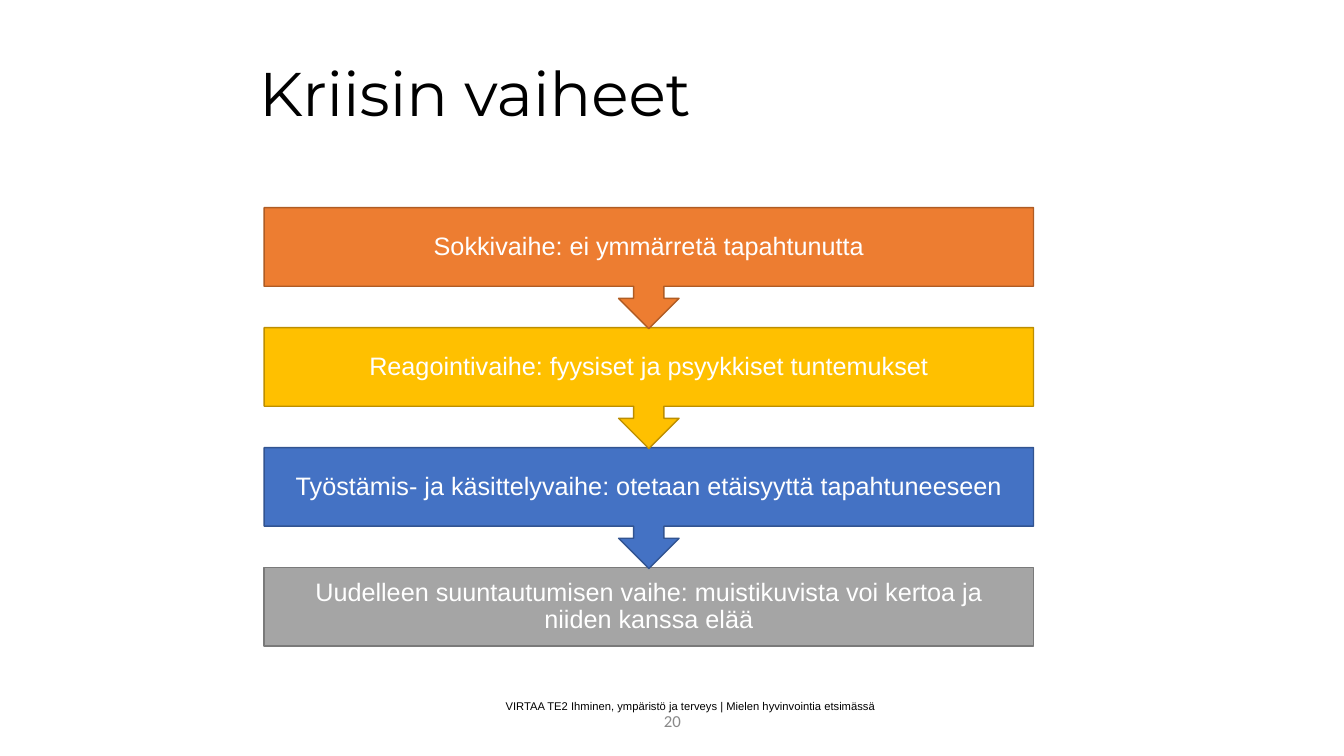
"""Build the slide on the phases of a crisis as a downward chain of boxes."""
from pptx import Presentation
from pptx.dml.color import RGBColor
from pptx.enum.shapes import MSO_SHAPE as Preset
from pptx.enum.text import MSO_ANCHOR as Anchor, PP_ALIGN as Align
from pptx.util import Inches, Pt

BLACK = RGBColor(0x00, 0x00, 0x00)
WHITE = RGBColor(0xFF, 0xFF, 0xFF)
PALE_GRAY = RGBColor(0x89, 0x89, 0x89)
ORANGE = RGBColor(0xED, 0x7D, 0x31)
DARK_ORANGE = RGBColor(0xAF, 0x5C, 0x24)
YELLOW = RGBColor(0xFF, 0xC0, 0x00)
DARK_YELLOW = RGBColor(0xBD, 0x8E, 0x00)
BLUE = RGBColor(0x44, 0x72, 0xC4)
DARK_BLUE = RGBColor(0x32, 0x54, 0x91)
GRAY = RGBColor(0xA5, 0xA5, 0xA5)
DARK_GRAY = RGBColor(0x7A, 0x7A, 0x7A)

PHASES = [
    ("Sokkivaihe: ei ymmärretä tapahtunutta", ORANGE, DARK_ORANGE),
    ("Reagointivaihe: fyysiset ja psyykkiset tuntemukset", YELLOW, DARK_YELLOW),
    ("Työstämis- ja käsittelyvaihe: otetaan etäisyyttä tapahtuneeseen",
     BLUE, DARK_BLUE),
    ("Uudelleen suuntautumisen vaihe: muistikuvista voi kertoa ja niiden kanssa elää",
     GRAY, DARK_GRAY),
]
LEFT, TOP, WIDTH = 2.62, 2.06, 7.63
BOX_HEIGHT, CALLOUT_HEIGHT, PITCH = 0.78, 1.2, 1.19


class SlideBuilder:
    """Hold the text style and the current slide."""

    def __init__(self, slide, font="Arial"):
        self.slide = slide
        self.font = font

    def set_text(self, frame, text, size, color, align, font=None, spacing=None):
        frame.word_wrap = True
        frame.vertical_anchor = Anchor.MIDDLE
        paragraph = frame.paragraphs[0]
        paragraph.alignment = align
        if spacing:
            paragraph.line_spacing = spacing
        run = paragraph.add_run()
        run.text = text
        run.font.name = font or self.font
        run.font.size = Pt(size)
        run.font.color.rgb = color

    def title(self, text, left, top, width, height):
        heading = self.slide.shapes.title
        heading.left, heading.top = Inches(left), Inches(top)
        heading.width, heading.height = Inches(width), Inches(height)
        self.set_text(heading.text_frame, text, 44, BLACK, Align.LEFT,
                      "Montserrat", 0.9)

    def label(self, text, left, top, width, height, size, color,
              font=None, inset=None, spacing=None):
        frame = self.slide.shapes.add_textbox(
            Inches(left), Inches(top), Inches(width), Inches(height)).text_frame
        if inset:
            frame.margin_left = frame.margin_right = Inches(inset)
            frame.margin_top = frame.margin_bottom = Inches(inset)
        self.set_text(frame, text, size, color, Align.CENTER, font, spacing)

    def phase(self, text, top, fill, outline, leads_on):
        preset = Preset.UP_ARROW_CALLOUT if leads_on else Preset.RECTANGLE
        height = CALLOUT_HEIGHT if leads_on else BOX_HEIGHT
        block = self.slide.shapes.add_shape(
            preset, Inches(LEFT), Inches(top), Inches(WIDTH), Inches(height))
        block.rotation = 180 if leads_on else 0
        block.shadow.inherit = False
        block.fill.solid()
        block.fill.fore_color.rgb = fill
        block.line.color.rgb = outline
        block.line.width = Pt(1)
        self.label(text, LEFT, top, WIDTH, BOX_HEIGHT, 18, WHITE,
                   inset=0.14, spacing=0.9)


def main():
    deck = Presentation()
    deck.slide_width, deck.slide_height = Inches(13.33), Inches(7.5)
    builder = SlideBuilder(deck.slides.add_slide(deck.slide_layouts[5]))
    builder.label("20", 4.42, 6.95, 4.5, 0.4, 12, PALE_GRAY, font="Calibri")
    builder.title("Kriisin vaiheet", 2.47, 0.33, 9, 1.25)
    last = len(PHASES) - 1
    for index, (text, fill, outline) in reversed(list(enumerate(PHASES))):
        builder.phase(text, TOP + index * PITCH, fill, outline, index < last)
    builder.label("VIRTAA TE2 Ihminen, ympäristö ja terveys | Mielen hyvinvointia etsimässä",
                  4.6, 6.8, 4.5, 0.4, 8, BLACK)
    deck.save("out.pptx")


if __name__ == "__main__":
    main()
